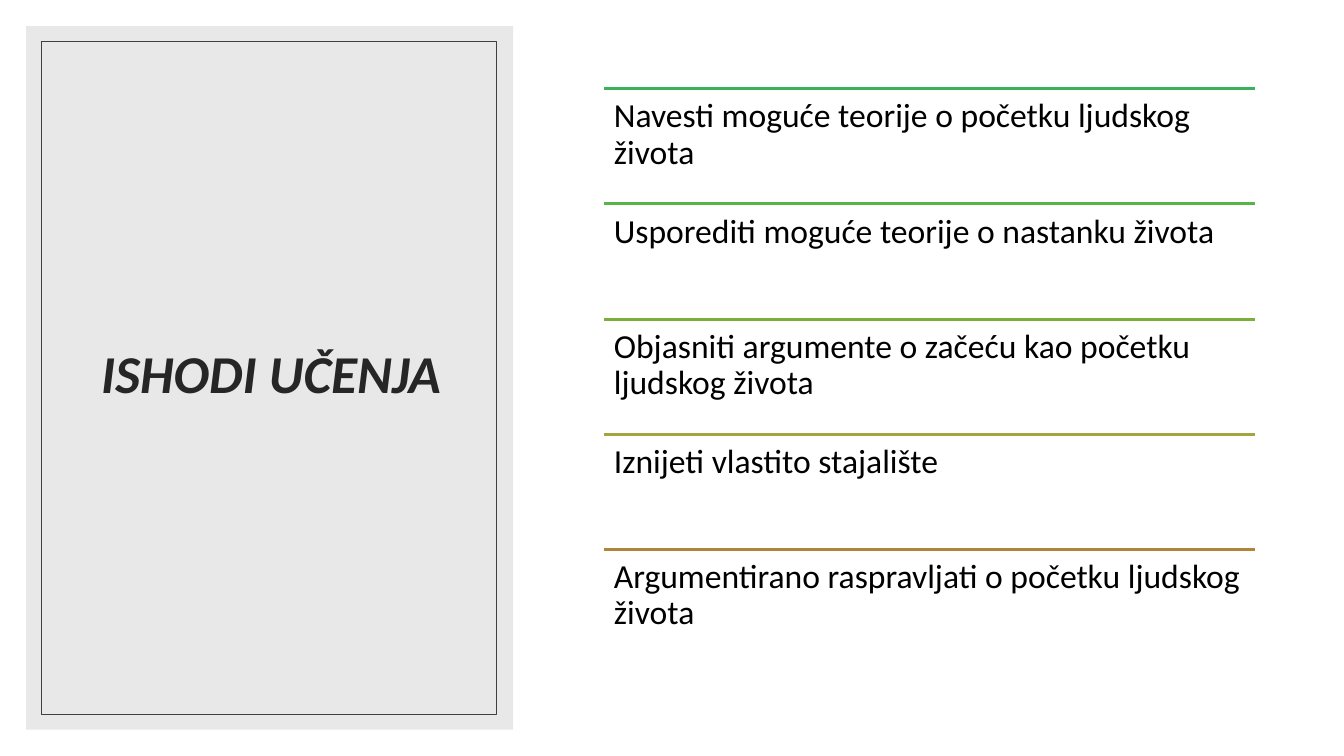
from lxml.etree import SubElement
from pptx import Presentation
from pptx.dml.color import RGBColor
from pptx.enum.shapes import MSO_CONNECTOR, MSO_SHAPE
from pptx.enum.text import MSO_ANCHOR, PP_ALIGN
from pptx.oxml.ns import qn
from pptx.util import Inches, Pt

WHITE = RGBColor(0xFF, 0xFF, 0xFF)
BLACK = RGBColor(0x00, 0x00, 0x00)
PANEL_GRAY = RGBColor(0xD9, 0xD9, 0xD9)
FRAME_GRAY = RGBColor(0x40, 0x40, 0x40)
TITLE_GRAY = RGBColor(0x26, 0x26, 0x26)
FONT = "Calibri"

LIST_LEFT = Inches(5.99)
LIST_TOP = Inches(0.88)
LIST_WIDTH = Inches(6.46)
ROW_HEIGHT = Inches(1.143)

OUTCOMES = [
    ("Navesti moguće teorije o početku ljudskog života", RGBColor(0x3B, 0xB1, 0x5B)),
    ("Usporediti moguće teorije o nastanku života", RGBColor(0x57, 0xB4, 0x47)),
    ("Objasniti argumente o začeću kao početku ljudskog života", RGBColor(0x7B, 0xAE, 0x3A)),
    ("Iznijeti vlastito stajalište", RGBColor(0xA3, 0xA5, 0x41)),
    ("Argumentirano raspravljati o početku ljudskog života", RGBColor(0xB1, 0x83, 0x3B)),
]


def add_rectangle(slide, left, top, width, height):
    shape = slide.shapes.add_shape(
        MSO_SHAPE.RECTANGLE, Inches(left), Inches(top), Inches(width), Inches(height))
    shape.shadow.inherit = False
    return shape


def add_panel(slide):
    panel = add_rectangle(slide, 0.26, 0.26, 4.83, 6.98)
    panel.fill.solid()
    panel.fill.fore_color.rgb = PANEL_GRAY
    panel.line.fill.background()
    color = panel.fill._xPr.find(qn("a:solidFill"))[0]
    SubElement(color, qn("a:alpha")).set("val", "60000")


def add_frame(slide):
    frame = add_rectangle(slide, 0.41, 0.41, 4.51, 6.68)
    frame.fill.background()
    frame.line.color.rgb = FRAME_GRAY
    frame.line.width = Pt(0.5)


def format_paragraph(paragraph, size, color):
    paragraph.line_spacing = 0.9
    paragraph.font.name = FONT
    paragraph.font.size = Pt(size)
    paragraph.font.color.rgb = color


def set_title(slide, text):
    title = slide.shapes.title
    title.left, title.top = Inches(0.63), Inches(0.61)
    title.width, title.height = Inches(4.12), Inches(6.24)
    frame = title.text_frame
    frame.text = text
    frame.word_wrap = True
    frame.vertical_anchor = MSO_ANCHOR.MIDDLE
    paragraph = frame.paragraphs[0]
    paragraph.alignment = PP_ALIGN.CENTER
    format_paragraph(paragraph, 38, TITLE_GRAY)
    paragraph.font.bold = True
    paragraph.font.italic = True
    slide.shapes.element.append(title.element)


def add_rule(slide, top, color):
    rule = slide.shapes.add_connector(
        MSO_CONNECTOR.STRAIGHT, LIST_LEFT, top, LIST_LEFT + LIST_WIDTH, top)
    rule.line.color.rgb = color
    rule.line.width = Pt(2)
    SubElement(rule.element.spPr, qn("a:effectLst"))


def add_outcome(slide, row, text, color):
    top = LIST_TOP + row * ROW_HEIGHT
    add_rule(slide, top, color)
    box = slide.shapes.add_textbox(LIST_LEFT, top, LIST_WIDTH, ROW_HEIGHT)
    frame = box.text_frame
    frame.word_wrap = True
    frame.margin_left = frame.margin_right = Inches(0.1)
    frame.margin_top = frame.margin_bottom = Inches(0.1)
    frame.text = text
    format_paragraph(frame.paragraphs[0], 24, BLACK)


def main():
    presentation = Presentation()
    presentation.slide_width = Inches(13.33)
    presentation.slide_height = Inches(7.5)
    slide = presentation.slides.add_slide(presentation.slide_layouts[5])
    slide.background.fill.solid()
    slide.background.fill.fore_color.rgb = WHITE
    add_panel(slide)
    set_title(slide, "ISHODI UČENJA")
    add_frame(slide)
    for row, (text, color) in enumerate(OUTCOMES):
        add_outcome(slide, row, text, color)
    presentation.save("out.pptx")


if __name__ == "__main__":
    main()
